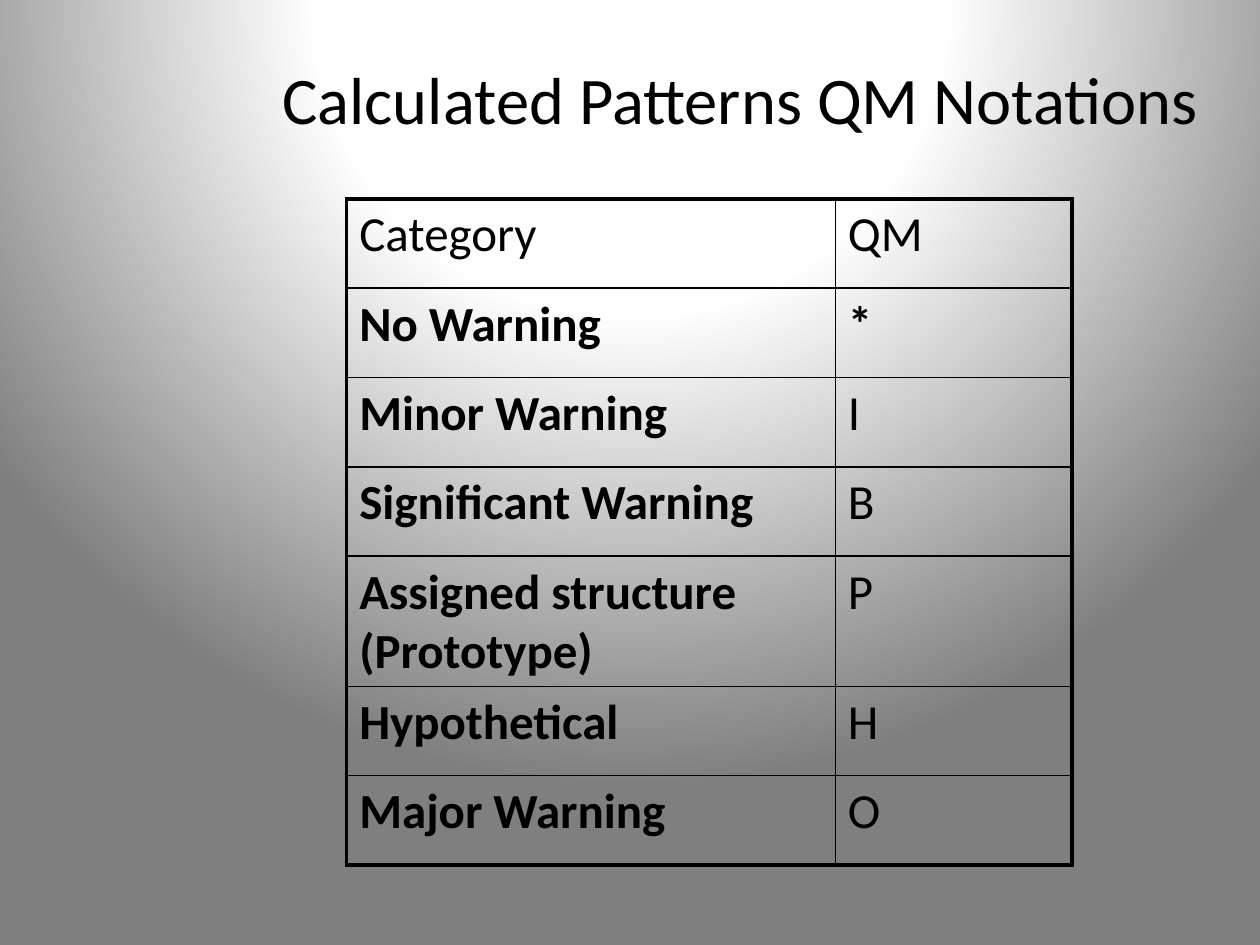
from lxml.etree import SubElement
from pptx import Presentation
from pptx.dml.color import RGBColor
from pptx.enum.text import MSO_ANCHOR, PP_ALIGN
from pptx.oxml.ns import qn
from pptx.util import Cm, Pt

# Content: category, notation, whether each one is bold
TITLE = "Calculated Patterns QM Notations"
ROWS = [
    ("Category", "QM", False, False),
    ("No Warning", "*", True, True),
    ("Minor Warning", "I", True, False),
    ("Significant Warning", "B", True, False),
    ("Assigned structure (Prototype)", "P", True, False),
    ("Hypothetical", "H", True, False),
    ("Major Warning", "O", True, False),
]
THEME = {
    "font": "Calibri",
    "ink": "000000",
    "title": 38,
    "body": 28,
    "outer": 2.25,
    "inner": 1,
    "stops": [(0, "FFFFFF"), (40, "FEFEFE"), (100, "7F7F7F")],
    "focus": {"l": 50, "t": -80, "r": 50, "b": 180},
}
COLS = [Cm(9.85), Cm(4.77)]
HIGH = Cm(1.8)


def write(frame, text, size=THEME["body"], bold=False, align=PP_ALIGN.LEFT):
    frame.word_wrap = True
    para = frame.paragraphs[0]
    para.alignment = align
    run = para.add_run()
    run.text = text
    font = run.font
    font.name, font.size, font.bold = THEME["font"], Pt(size), bold
    font.color.rgb = RGBColor.from_string(THEME["ink"])


def shade(slide):
    """Fill the background with a circular gradient."""
    fill = slide.background.fill
    fill.gradient()
    grad = slide.element.find(".//" + qn("a:gradFill"))
    for part in list(grad):
        grad.remove(part)
    stops = SubElement(grad, qn("a:gsLst"))
    for pos, tone in THEME["stops"]:
        stop = SubElement(stops, qn("a:gs"), pos=str(pos * 1000))
        SubElement(stop, qn("a:srgbClr"), val=tone)
    ring = SubElement(grad, qn("a:path"), path="circle")
    focus = {side: str(part * 1000) for side, part in THEME["focus"].items()}
    SubElement(ring, qn("a:fillToRect"), focus)


def frame_cell(cell, edges):
    """Draw the four borders, thick on the outer edges."""
    props = cell._tc.get_or_add_tcPr()
    for side in "LRTB":
        width = THEME["outer" if side in edges else "inner"]
        line = SubElement(props, qn("a:ln" + side), w=str(Pt(width)))
        paint = SubElement(line, qn("a:solidFill"))
        SubElement(paint, qn("a:srgbClr"), val=THEME["ink"])
    cell.fill.background()


def main():
    deck = Presentation()
    deck.slide_width, deck.slide_height = Cm(25.4), Cm(19.05)
    slide = deck.slides.add_slide(deck.slide_layouts[6])
    shade(slide)

    # Title
    box = slide.shapes.add_textbox(Cm(4.45), Cm(0.76), Cm(20.95), Cm(2.41))
    box.text_frame.vertical_anchor = MSO_ANCHOR.MIDDLE
    write(box.text_frame, TITLE, size=THEME["title"], align=PP_ALIGN.CENTER)

    # Notation table
    last = len(ROWS) - 1
    grid = slide.shapes.add_table(
        len(ROWS), len(COLS), Cm(6.99), Cm(4.01), sum(COLS), HIGH * len(ROWS)
    ).table
    grid.first_row = grid.horz_banding = False
    for col, width in zip(grid.columns, COLS):
        col.width = width
    for r, (name, mark, *bolds) in enumerate(ROWS):
        grid.rows[r].height = HIGH
        rim = ("T" if r == 0 else "") + ("B" if r == last else "")
        for c, text in enumerate((name, mark)):
            cell = grid.cell(r, c)
            write(cell.text_frame, text, bold=bolds[c])
            frame_cell(cell, rim + "LR"[c])

    deck.save("out.pptx")


if __name__ == "__main__":
    main()
